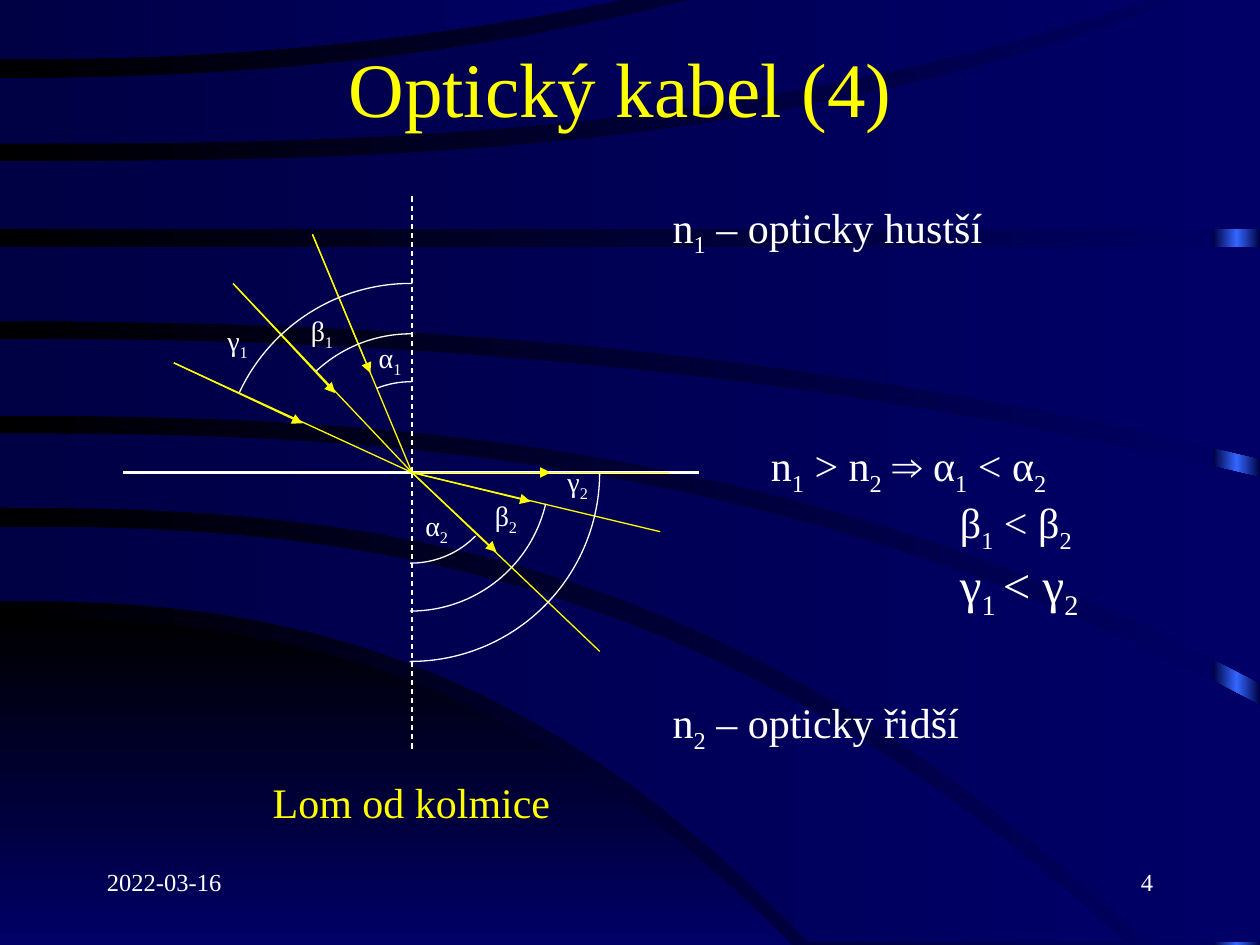
from copy import deepcopy
from dataclasses import dataclass

from lxml.etree import SubElement
from pptx import Presentation
from pptx.dml.color import RGBColor as Rgb
from pptx.enum.dml import MSO_LINE
from pptx.enum.shapes import MSO_CONNECTOR as Conn, MSO_SHAPE as Shape
from pptx.enum.text import MSO_ANCHOR as Anchor, PP_ALIGN as Align
from pptx.oxml.ns import qn
from pptx.util import Inches, Pt


@dataclass(frozen=True)
class Theme:
    font: str = "Times New Roman"
    white: str = "FFFFFF"
    yellow: str = "FFFF00"
    black: str = "000000"
    dark: str = "000044"
    navy: str = "000066"
    blue: str = "3366FF"
    title: int = 44
    big: int = 28
    body: int = 24
    mark: int = 16
    foot: int = 14
    thin: float = 0.75
    thick: float = 1.75


T = Theme()
HUB = (3.27, 3.75)  # where the rays meet the boundary
MID = (3.26, 3.75)  # centre of the angle arcs
STEPS = 24          # segments along each wave edge

# Upper and lower edge of each wave: y at the left, end x, end y, power
WAVES = [
    ((4.18, 8.93, 7.48, 2.5), (4.77, 6.42, 7.48, 2.5)),
    ((3.44, 10, 5.6, 2.5), (4.03, 9.09, 7.48, 2.55)),
    ((2.69, 10, 3.79, 2.2), (3.3, 10, 5.42, 2.5)),
    ((1.96, 10, 1.96, 1), (2.55, 10, 3.64, 2.25)),
    ((1.28, 9.43, -0.02, 2.8), (1.82, 10, 1.82, 1)),
    ((0.62, 5.56, -0.02, 2.25), (1.14, 9.17, -0.02, 2.7)),
    ((-0.02, 5.01, -0.02, 1), (0.47, 5.01, -0.02, 2.2)),
]
HILL = ((4.91, 6.28, 7.5, 2.5), (7.5, 6.28, 7.5, 1))


def shade(fill, start, end, turn=0):
    fill.gradient()
    fill.gradient_angle = turn
    for stop, color, pos in zip(fill.gradient_stops, (start, end), (0, 1)):
        stop.color.rgb = Rgb.from_string(color)
        stop.position = pos


def trace(first, right, last, power):
    """Points of an edge that bends as a power of x."""
    parts = [i / STEPS for i in range(STEPS + 1)]
    return [(right * t, first + (last - first) * t ** power) for t in parts]


def add_wave(shapes, edges, start, end, turn=0):
    top, low = (trace(*edge) for edge in edges)
    # The shorter edge runs on to the right end of the longer one
    corner = (max(top[-1][0], low[-1][0]), min(top[-1], low[-1])[1])
    pts = [(Inches(x), Inches(y)) for x, y in top + [corner] + low[::-1]]
    form = shapes.build_freeform(*pts[0])
    form.add_line_segments(pts[1:])
    wave = form.convert_to_shape()
    wave.shadow.inherit = False
    wave.line.fill.background()
    shade(wave.fill, start, end, turn)


def add_band(shapes):
    band = shapes.add_shape(Shape.RECTANGLE, Inches(9.63), 0,
                            Inches(0.37), Inches(7.5))
    band.shadow.inherit = False
    band.line.fill.background()
    shade(band.fill, T.dark, T.dark)
    # Bright middle stop
    first = next(band._element.iter(qn("a:gs")))
    first.addnext(deepcopy(first))
    mid = band.fill.gradient_stops[1]
    mid.position = 0.5
    mid.color.rgb = Rgb.from_string(T.blue)


def add_line(shapes, start, end, color, width=T.thin, dash=False, arrow=False):
    line = shapes.add_connector(Conn.STRAIGHT, *map(Inches, start + end))
    line.line.color.rgb = Rgb.from_string(color)
    line.line.width = Pt(width)
    if dash:
        line.line.dash_style = MSO_LINE.DASH
    if arrow:
        SubElement(line.line._get_or_add_ln(), qn("a:tailEnd"), type="triangle")
    SubElement(line._element.spPr, qn("a:effectLst"))


def add_arc(shapes, rad, start, end):
    """Draw an arc about MID; angles in degrees, clockwise from the right."""
    arc = shapes.add_shape(Shape.ARC, Inches(MID[0] - rad), Inches(MID[1] - rad),
                           Inches(2 * rad), Inches(2 * rad))
    arc.shadow.inherit = False
    arc.fill.background()
    arc.line.color.rgb = Rgb.from_string(T.white)
    arc.line.width = Pt(T.thin)
    # One adjustment unit is 100000 sixty-thousandths of a degree
    arc.adjustments[0], arc.adjustments[1] = start * 0.6, end * 0.6


def set_text(para, text, size, color=T.white, align=Align.LEFT):
    """Fill a paragraph; every second part between bars is a subscript."""
    para.alignment = align
    para.font.name, para.font.size = T.font, Pt(size)
    para.font.color.rgb = Rgb.from_string(color)
    for i, part in enumerate(text.split("|")):
        if part:
            run = para.add_run()
            run.text = part
            if i % 2:
                run.font._element.set("baseline", "-25000")


def add_text(shapes, box, text, size, color=T.white, align=Align.LEFT):
    frame = shapes.add_textbox(*map(Inches, box)).text_frame
    frame.word_wrap = True
    set_text(frame.paragraphs[0], text, size, color, align)
    return frame


def main():
    prs = Presentation()
    prs.slide_width, prs.slide_height = Inches(10), Inches(7.5)
    slide = prs.slides.add_slide(prs.slide_layouts[5])
    shapes = slide.shapes

    # Background
    shade(slide.background.fill, T.black, T.navy)
    add_band(shapes)
    add_wave(shapes, HILL, T.black, T.navy, 270)
    for wave in WAVES:
        add_wave(shapes, wave, T.dark, T.navy)

    # Title, raised above the waves
    title = shapes.title
    title.left, title.top = Inches(0.75), Inches(0.21)
    title.width, title.height = Inches(8.5), Inches(0.95)
    title.text_frame.vertical_anchor = Anchor.MIDDLE
    set_text(title.text_frame.paragraphs[0], "Optický kabel (4) ",
             T.title, T.yellow, Align.CENTER)
    shapes._spTree.append(title._element)

    # Boundary and normal
    for x in (0.98, 5.55):
        add_line(shapes, HUB, (x, HUB[1]), T.white, T.thick)
    for y in (1.55, 5.95):
        add_line(shapes, HUB, (HUB[0], y), T.white, dash=True)

    # Rays: start, arrow tip, end
    for start, tip, end in [
        ((2.48, 1.86), (2.94, 2.96), HUB),
        ((1.85, 2.25), (2.66, 3.12), HUB),
        ((1.38, 2.88), (2.4, 3.36), HUB),
        (HUB, (3.94, 4.38), (4.76, 5.17)),
        (HUB, (4.21, 3.98), (5.24, 4.22)),
        (HUB, (4.37, 3.75), (5.31, 3.75)),
    ]:
        add_line(shapes, start, end, T.yellow)
        add_line(shapes, start, tip, T.yellow, arrow=True)

    # Angles: radius, start of upper arc, start of lower arc
    for rad, upper, lower in [(0.72, 248, 44.4), (1.1, 227, 13.1),
                              (1.5, 205, 0.1)]:
        add_arc(shapes, rad, upper, 270.5)
        add_arc(shapes, rad, lower, 90.3)
    for text, x, y in [("α|1", 2.82, 2.65), ("β|1", 2.28, 2.44),
                       ("γ|1", 1.61, 2.52), ("α|2", 3.19, 3.99),
                       ("β|2", 3.74, 3.91), ("γ|2", 4.31, 3.64)]:
        add_text(shapes, (x, y, 0.55, 0.47), text, T.mark, align=Align.CENTER)

    # Media and their relations
    for text, y in [("n|1| – opticky hustší", 1.55),
                    ("n|2| – opticky řidší", 5.48)]:
        add_text(shapes, (5.24, y, 2.91, 0.47), text, T.body)
    frame = add_text(shapes, (6.02, 3.44, 3.23, 1.34),
                     "n|1| > n|2| ⇒ α|1| < α|2", T.body)
    for text, size in [("β|1| < β|2", T.body), ("γ|1 |< γ|2", T.big)]:
        para = frame.add_paragraph()
        set_text(para, text, size)
        para._p.get_or_add_pPr().set("marL", str(Inches(1.5)))

    # Caption and footer
    add_text(shapes, (1.77, 6.11, 2.99, 0.47), "Lom od kolmice", T.body,
             T.yellow, Align.CENTER)
    add_text(shapes, (0.75, 6.83, 2.08, 0.5), "2022-03-16", T.foot)
    add_text(shapes, (7.17, 6.83, 2.08, 0.5), "4", T.foot, align=Align.RIGHT)
    prs.save("out.pptx")


if __name__ == "__main__":
    main()
